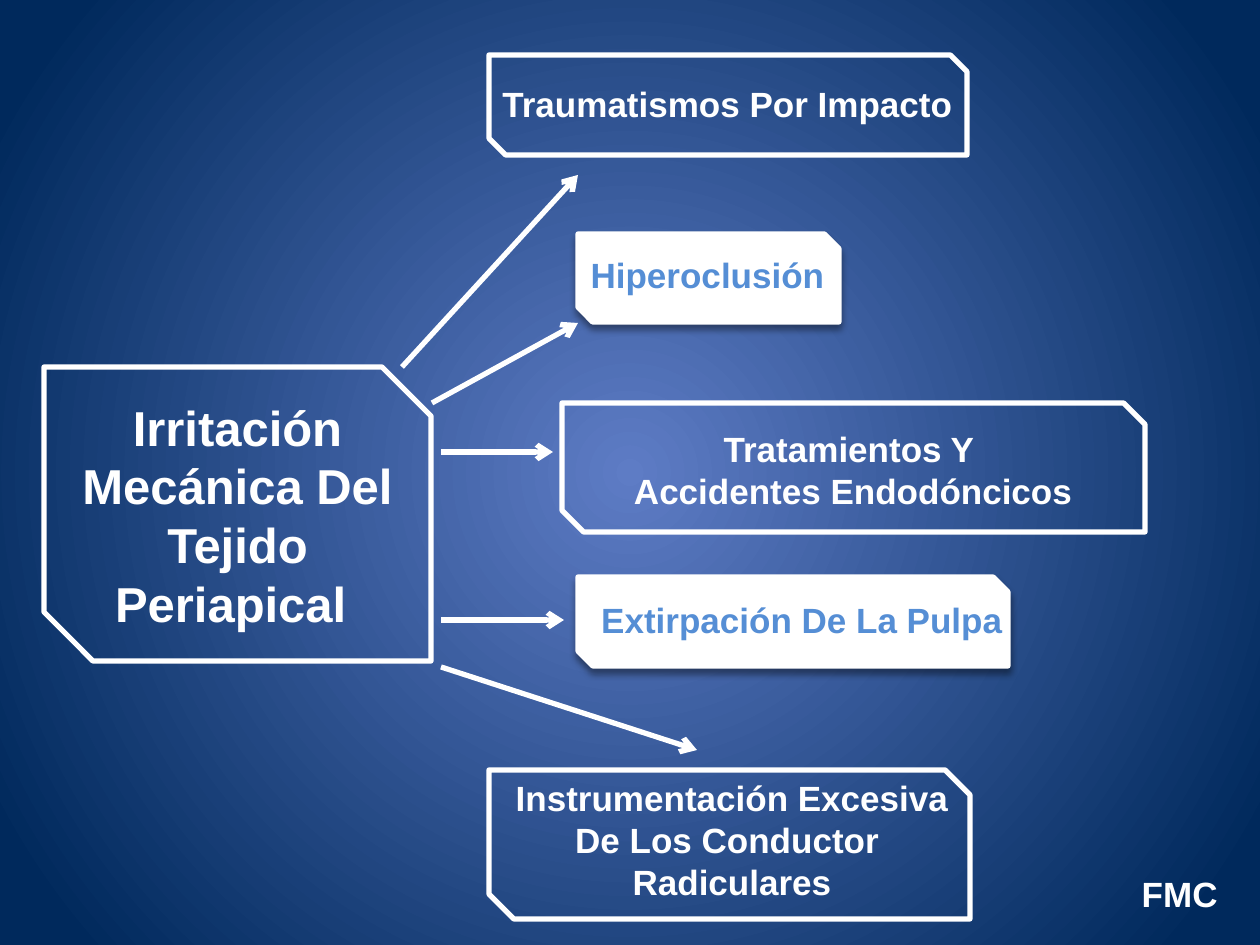
import lxml.etree
import pptx
import pptx.dml.color
import pptx.enum.shapes
import pptx.enum.text
import pptx.oxml.ns
import pptx.util

PX = 914400 / 126
COLORS = {"white": "FFFFFF", "blue": "558ED5", "glow": "5E7CC5", "navy": "00295C", "black": "000000"}
qn = pptx.oxml.ns.qn
ALIGN = pptx.enum.text.PP_ALIGN
ANCHOR = pptx.enum.text.MSO_ANCHOR


def emu(*lengths):
    return [round(n * PX) for n in lengths]


def rgb(name):
    return pptx.dml.color.RGBColor.from_string(COLORS[name])


def add(parent, tag, **attrs):
    return lxml.etree.SubElement(parent, qn(tag), {k: str(v) for k, v in attrs.items()})


class Canvas:
    font = "Arial"
    line_width = pptx.util.Pt(3)

    def __init__(self, s):
        self.s = s

    def background(self, inner, outer, reach):
        fill = self.s.background.fill
        fill.gradient()
        for stop, name, pos in zip(fill.gradient_stops, (inner, outer), (0, reach)):
            stop.color.rgb = rgb(name)
            stop.position = pos
        grad = self.s.element.find(".//" + qn("a:gradFill"))
        grad.remove(grad.find(qn("a:lin")))
        circle = add(grad, "a:path", path="circle")
        add(circle, "a:fillToRect", l=50000, t=50000, r=50000, b=50000)

    def stroke(self, line):
        line.color.rgb = rgb("white")
        line.width = self.line_width

    def frame(self, box, filled=False):
        kind = pptx.enum.shapes.MSO_SHAPE.SNIP_2_DIAG_RECTANGLE
        sp = self.s.shapes.add_shape(kind, *emu(*box))
        self.stroke(sp.line)
        sp.shadow.inherit = False
        if filled:
            sp.fill.solid()
            sp.fill.fore_color.rgb = rgb("white")
            self.shadow(sp)
        else:
            sp.fill.background()

    def shadow(self, sp):
        effects = sp.element.spPr.find(qn("a:effectLst"))
        outer = add(effects, "a:outerShdw", blurRad=pptx.util.Pt(4), dist=pptx.util.Pt(3),
                    dir=5400000, rotWithShape=0)
        add(add(outer, "a:srgbClr", val=COLORS["black"]), "a:alpha", val=40000)

    def text(self, box, lines, color="white", size=20, wrap=False, align=ALIGN.CENTER, anchor=ANCHOR.TOP):
        tf = self.s.shapes.add_textbox(*emu(*box)).text_frame
        tf.word_wrap = wrap
        tf.vertical_anchor = anchor
        tf.text = "\n".join(lines)
        for p in tf.paragraphs:
            p.alignment = align
            p.font.name = self.font
            p.font.size = pptx.util.Pt(size)
            p.font.bold = True
            p.font.color.rgb = rgb(color)

    def arrow(self, start, end):
        kind = pptx.enum.shapes.MSO_CONNECTOR.STRAIGHT
        sp = self.s.shapes.add_connector(kind, *emu(*start, *end))
        self.stroke(sp.line)
        add(sp.line._get_or_add_ln(), "a:tailEnd", type="arrow")
        add(sp._element.spPr, "a:effectLst")


def main():
    prs = pptx.Presentation()
    prs.slide_width, prs.slide_height = emu(1260, 945)
    c = Canvas(prs.slides.add_slide(prs.slide_layouts[6]))
    c.background("glow", "navy", 0.92)

    for box in [(578, 577, 430, 89), (578, 234, 261, 88)]:
        c.frame(box, filled=True)

    c.text((54, 391, 367, 251), ["Irritación Mecánica Del Tejido Periapical "], size=28, wrap=True)
    c.text((488, 76, 479, 55), ["Traumatismos Por Impacto"])
    c.text((577, 247, 261, 55), ["Hiperoclusión"], "blue")
    c.text((611, 421, 476, 97), ["Tratamientos Y", " Accidentes Endodóncicos"])
    c.text((587, 592, 430, 55), ["Extirpación De La Pulpa"], "blue")
    c.text((501, 770, 462, 140), ["Instrumentación Excesiva ", "De Los Conductor ", "Radiculares"])

    for box in [(489, 55, 478, 100), (562, 403, 583, 129), (489, 770, 481, 149), (44, 367, 387, 294)]:
        c.frame(box)

    for start, end in [
        ((402, 367), (578, 175)),
        ((432, 403), (578, 323)),
        ((441, 452), (553, 452)),
        ((441, 620), (564, 620)),
        ((441, 667), (697, 750)),
    ]:
        c.arrow(start, end)

    c.text((1120, 869, 110, 50), ["FMC"], wrap=True, align=ALIGN.RIGHT, anchor=ANCHOR.MIDDLE)
    prs.save("out.pptx")


if __name__ == "__main__":
    main()
